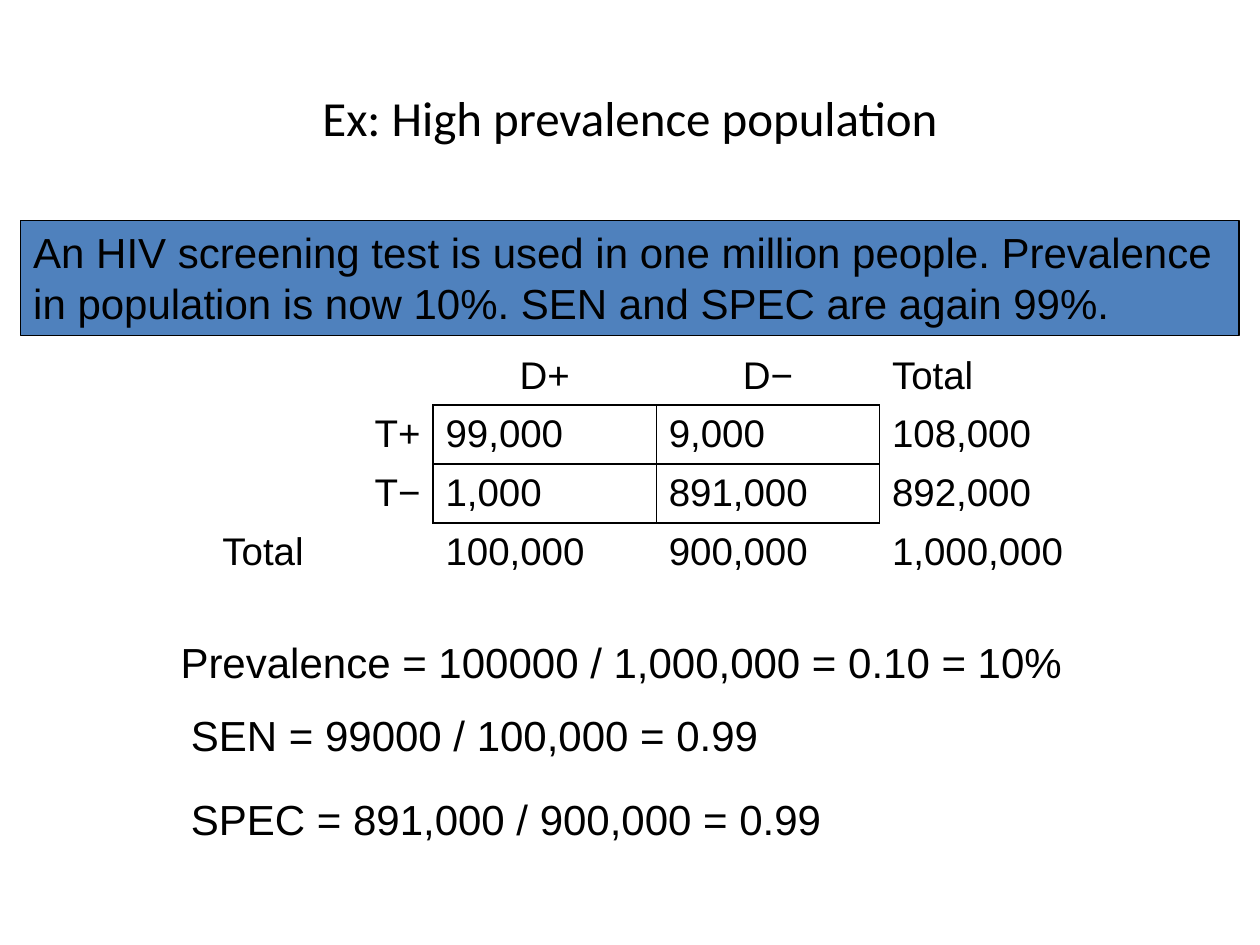
from dataclasses import dataclass

from lxml import etree
from pptx import Presentation
from pptx import util as u
from pptx.dml.color import RGBColor
from pptx.enum import shapes, text
from pptx.oxml.ns import qn

COLORS = {"ink": "000000", "banner": "4F81BD"}
NO_GRID_STYLE = "{2D5ABB26-0587-4C30-8999-92F81FD0307C}"
LEFT, CENTER, RIGHT = text.PP_ALIGN.LEFT, text.PP_ALIGN.CENTER, text.PP_ALIGN.RIGHT

COUNTS = [
    ["", "D+", "D−", "Total"],
    ["T+", "99,000", "9,000", "108,000"],
    ["T−", "1,000", "891,000", "892,000"],
    ["Total", "100,000", "900,000", "1,000,000"],
]
BOXED = {(row, column) for row in (1, 2) for column in (1, 2)}
SIDES = {"lnL": (0, -1), "lnR": (0, 1), "lnT": (-1, 0), "lnB": (1, 0)}


@dataclass
class TextBlock:
    """A line of text with its box in centimetres."""
    words: str
    left: float
    top: float
    width: float
    height: float
    size: int = 24
    font: str = "Arial"
    align: text.PP_ALIGN = LEFT
    anchor: text.MSO_ANCHOR = text.MSO_ANCHOR.TOP

    @property
    def bounds(self) -> list:
        return [u.Cm(n) for n in (self.left, self.top, self.width, self.height)]


TITLE = TextBlock("Ex: High prevalence population", 1.27, 0.76, 22.86, 3.18,
                  size=28, font="Calibri", align=CENTER,
                  anchor=text.MSO_ANCHOR.MIDDLE)
BANNER = TextBlock("An HIV screening test is used in one million people. "
                   "Prevalence in population is now 10%. "
                   "SEN and SPEC are again 99%.", 0.42, 4.45, 24.56, 2.31)
RESULTS = [
    TextBlock("Prevalence = 100000 / 1,000,000 = 0.10 = 10%", 3.39, 12.7, 19.47, 1.28),
    TextBlock("SEN = 99000 / 100,000 = 0.99", 3.6, 14.18, 12.1, 1.28),
    TextBlock("SPEC = 891,000 / 900,000 = 0.99", 3.6, 15.87, 13.4, 1.28),
]


def color(name: str) -> RGBColor:
    return RGBColor.from_string(COLORS[name])


def style_paragraph(paragraph, size: int, font: str, align: text.PP_ALIGN) -> None:
    paragraph.alignment = align
    paragraph.font.size = u.Pt(size)
    paragraph.font.name = font
    paragraph.font.color.rgb = color("ink")


def fill_frame(shape, block: TextBlock) -> None:
    frame = shape.text_frame
    frame.text = block.words
    frame.word_wrap = True
    frame.vertical_anchor = block.anchor
    style_paragraph(frame.paragraphs[0], block.size, block.font, block.align)


def add_text(slide, block: TextBlock) -> None:
    fill_frame(slide.shapes.add_textbox(*block.bounds), block)


def add_banner(slide, block: TextBlock) -> None:
    shape = slide.shapes.add_shape(shapes.MSO_SHAPE.RECTANGLE, *block.bounds)
    shape.shadow.inherit = False
    shape.fill.solid()
    shape.fill.fore_color.rgb = color("banner")
    shape.line.color.rgb = color("ink")
    shape.line.width = u.Pt(0.75)
    fill_frame(shape, block)


def add_borders(cell, row: int, column: int) -> None:
    """Rule each side that this cell shares with the boxed counts."""
    properties = cell._tc.get_or_add_tcPr()
    for tag, (down, across) in SIDES.items():
        if BOXED & {(row, column), (row + down, column + across)}:
            line = etree.SubElement(properties, qn(f"a:{tag}"), w=str(u.Pt(1)))
            fill = etree.SubElement(line, qn("a:solidFill"))
            etree.SubElement(fill, qn("a:srgbClr"), val=COLORS["ink"])


def cell_alignment(row: int, column: int) -> text.PP_ALIGN:
    if row == 0 and column in (1, 2):
        return CENTER
    return RIGHT if column == 0 and row in (1, 2) else LEFT


def add_counts_table(slide) -> None:
    frame = slide.shapes.add_table(len(COUNTS), len(COUNTS[0]), u.Cm(4.23),
                                   u.Cm(6.98), u.Cm(18), u.Cm(4.75))
    table = frame.table
    table.first_row = table.horz_banding = False
    table._tbl.tblPr.find(qn("a:tableStyleId")).text = NO_GRID_STYLE
    for row, values in enumerate(COUNTS):
        for column, value in enumerate(values):
            cell = table.cell(row, column)
            cell.text = value
            cell.vertical_anchor = text.MSO_ANCHOR.MIDDLE
            style_paragraph(cell.text_frame.paragraphs[0], 22, "Arial",
                            cell_alignment(row, column))
            add_borders(cell, row, column)
            cell.fill.background()


def main() -> None:
    presentation = Presentation()
    presentation.slide_width, presentation.slide_height = u.Cm(25.4), u.Cm(19.05)
    slide = presentation.slides.add_slide(presentation.slide_layouts[6])
    add_text(slide, TITLE)
    add_counts_table(slide)
    for result in RESULTS:
        add_text(slide, result)
    add_banner(slide, BANNER)
    presentation.save("out.pptx")


if __name__ == "__main__":
    main()
